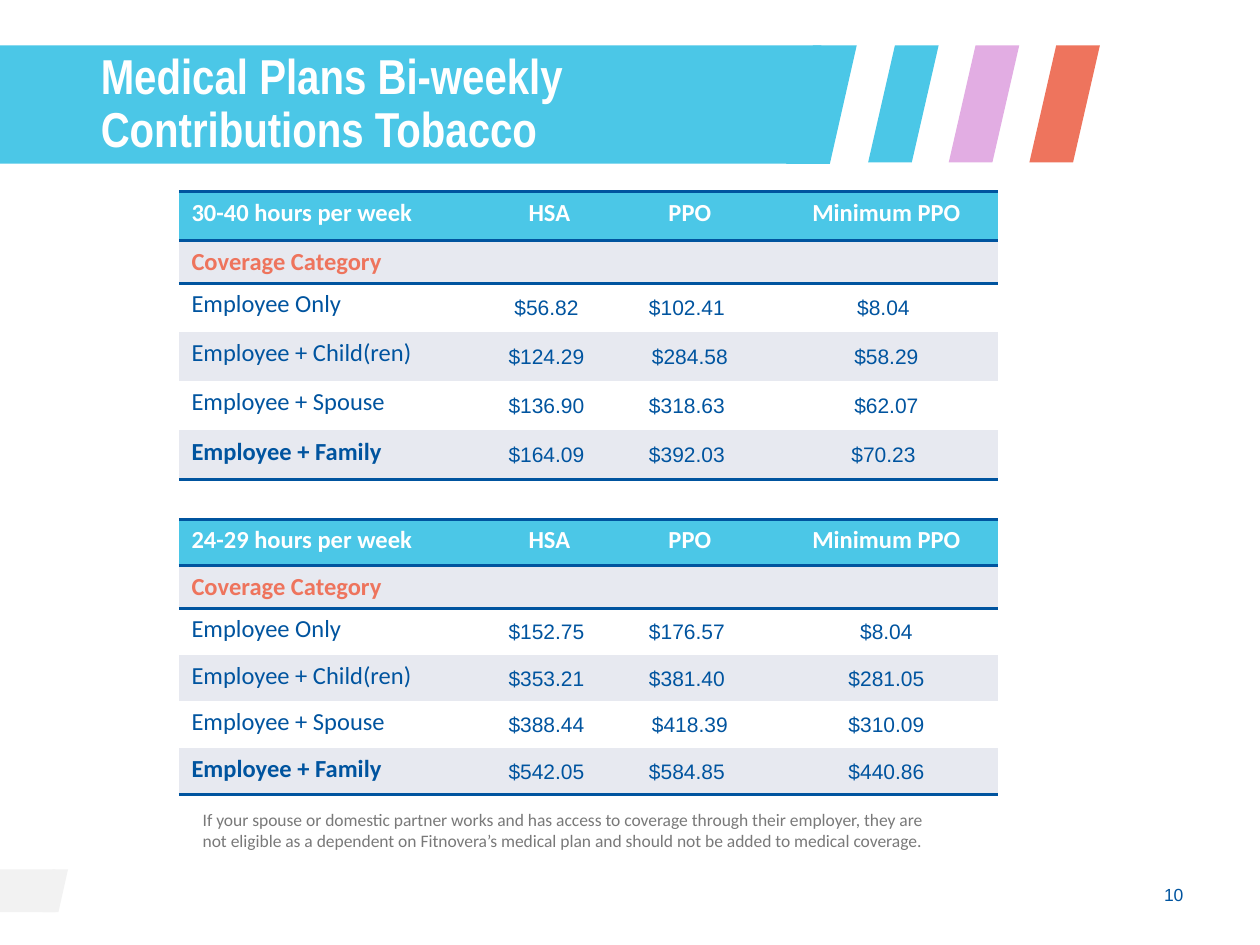
from lxml import etree
from pptx import Presentation
from pptx.dml.color import RGBColor
from pptx.enum.shapes import MSO_SHAPE
from pptx.enum.text import MSO_ANCHOR, MSO_AUTO_SIZE, PP_ALIGN
from pptx.oxml.ns import qn
from pptx.util import Inches, Pt

RECTANGLE, SLANT = MSO_SHAPE.RECTANGLE, MSO_SHAPE.PARALLELOGRAM
LEFT, CENTER, RIGHT = PP_ALIGN.LEFT, PP_ALIGN.CENTER, PP_ALIGN.RIGHT
TOP, MIDDLE = MSO_ANCHOR.TOP, MSO_ANCHOR.MIDDLE
NO_FIT = MSO_AUTO_SIZE.NONE
TITLE_ONLY = 5
PLAIN_TABLE = "{2D5ABB26-0587-4C30-8999-92F81FD0307C}"

COLORS = {
    "sky": "4BC7E7", "orchid": "E2ADE3", "coral": "EE745D", "navy": "00549F",
    "band": "E7E9F0", "white": "FFFFFF", "corner": "F2F2F2", "gray": "797979",
}

# Text formats
TITLE = {"name": "Arial Narrow", "size": Pt(28), "bold": True, "color": "white"}
HEADER = {"name": "Calibri", "size": Pt(14), "bold": True, "color": "white"}
CATEGORY = {**HEADER, "color": "coral"}
LABEL = {**HEADER, "bold": False, "color": "navy"}
TOTAL_LABEL = {**LABEL, "bold": True}
AMOUNT = {"name": "Arial", "size": Pt(12), "bold": False, "color": "navy"}
NOTE = {"name": "Calibri", "size": Pt(10), "bold": False, "color": "gray"}
NUMBER = {"name": "Arial", "size": Pt(10), "bold": False, "color": "navy"}

# Table content
COLUMN_WIDTHS = [2.5, 0.88, 1.35, 1.77]
PLANS = ["HSA", "PPO", "Minimum PPO"]
COVERAGE = ["Employee Only", "Employee + Child(ren)", "Employee + Spouse", "Employee + Family"]
FULL_TIME = [
    ["$56.82 ", "$102.41 ", "$8.04 "],
    ["$124.29 ", "$284.58", "$58.29"],
    ["$136.90 ", "$318.63 ", "$62.07"],
    ["$164.09 ", "$392.03 ", "$70.23 "],
]
PART_TIME = [
    ["$152.75 ", "$176.57 ", "$8.04"],
    ["$353.21 ", "$381.40 ", "$281.05"],
    ["$388.44 ", "$418.39", "$310.09"],
    ["$542.05 ", "$584.85 ", "$440.86"],
]
NOTE_LINES = [
    "If your spouse or domestic partner works and has access to coverage through their employer, they are",
    "not eligible as a dependent on Fitnovera’s medical plan and should not be added to medical coverage.",
]


def rgb(name):
    return RGBColor.from_string(COLORS[name])


def write(frame, lines, style, align=LEFT, spacing=None):
    for index, line in enumerate(lines):
        para = frame.paragraphs[0] if index == 0 else frame.add_paragraph()
        para.alignment = align
        para.line_spacing = spacing
        span = para.add_run()
        span.text = line
        for key, value in style.items():
            if key == "color":
                span.font.color.rgb = rgb(value)
            else:
                setattr(span.font, key, value)


def add_block(page, kind, left, top, width, height, color):
    block = page.shapes.add_shape(kind, Inches(left), Inches(top), Inches(width), Inches(height))
    block.shadow.inherit = False
    block.fill.solid()
    block.fill.fore_color.rgb = rgb(color)
    block.line.fill.background()
    if kind == SLANT:
        block.adjustments[0] = 0.381


def add_text(page, left, top, width, height, lines, style, align=LEFT, anchor=TOP):
    box = page.shapes.add_textbox(Inches(left), Inches(top), Inches(width), Inches(height))
    box.text_frame.word_wrap = True
    box.text_frame.vertical_anchor = anchor
    write(box.text_frame, lines, style, align)


def add_title(page, text):
    title = page.shapes.title
    title.left, title.top = Inches(0.7), Inches(0.61)
    title.width, title.height = Inches(5.83), Inches(0.45)
    frame = title.text_frame
    frame.word_wrap, frame.auto_size, frame.vertical_anchor = True, NO_FIT, MIDDLE
    write(frame, [text], TITLE, spacing=0.9)


def add_rules(cell, edges):
    """Draw navy rules on the given cell edges, which come before the cell fill."""
    properties = cell._tc.get_or_add_tcPr()
    for position, edge in enumerate(edges):
        rule = etree.Element(qn("a:" + edge), w=str(Pt(2)))
        fill = etree.SubElement(rule, qn("a:solidFill"))
        etree.SubElement(fill, qn("a:srgbClr"), val=COLORS["navy"])
        properties.insert(position, rule)


def fill_cell(cell, text, style, color, align=LEFT, edges=()):
    cell.fill.solid()
    cell.fill.fore_color.rgb = rgb(color)
    add_rules(cell, edges)
    if style is AMOUNT:
        cell.vertical_anchor = MIDDLE
        cell.margin_left = cell.margin_top = cell.margin_right = Inches(0.01)
        cell.margin_bottom = 0
    if text:
        write(cell.text_frame, [text], style, align)


def add_rates(page, top, row_height, category_height, hours, amounts):
    heights = [row_height, category_height] + [row_height] * len(amounts)
    holder = page.shapes.add_table(
        len(heights), len(COLUMN_WIDTHS), Inches(1.42), Inches(top),
        Inches(sum(COLUMN_WIDTHS)), Inches(sum(heights)))
    table = holder.table
    table._tbl.tblPr.find(qn("a:tableStyleId")).text = PLAIN_TABLE
    table.horz_banding = False
    for column, width in zip(table.columns, COLUMN_WIDTHS):
        column.width = Inches(width)
    for row, height in zip(table.rows, heights):
        row.height = Inches(height)

    # Header and category rows
    for index, text in enumerate([hours] + PLANS):
        align = CENTER if index else LEFT
        fill_cell(table.cell(0, index), text, HEADER, "sky", align, ["lnT", "lnB"])
        fill_cell(table.cell(1, index), "" if index else "Coverage Category",
                  CATEGORY, "band", edges=["lnT"])
    table.cell(1, 0).merge(table.cell(1, len(PLANS)))

    # Contribution rows
    last = len(amounts) - 1
    for index, (label, values) in enumerate(zip(COVERAGE, amounts)):
        color = "band" if index % 2 else "white"
        edges = ["lnB"] if index == last else []
        label_style = TOTAL_LABEL if index == last else LABEL
        fill_cell(table.cell(index + 2, 0), label, label_style, color, edges=edges)
        for column, value in enumerate(values, start=1):
            fill_cell(table.cell(index + 2, column), value, AMOUNT, color, CENTER, edges)


def main():
    deck = Presentation()
    deck.slide_width, deck.slide_height = Inches(10), Inches(7.5)
    page = deck.slides.add_slide(deck.slide_layouts[TITLE_ONLY])

    # Corner tab and title banner
    add_block(page, SLANT, 0.34, 6.9, 0.2, 0.34, "corner")
    add_block(page, RECTANGLE, 0, 6.9, 0.44, 0.34, "corner")
    add_block(page, RECTANGLE, 0, 0.36, 6.52, 0.94, "sky")
    add_block(page, SLANT, 6.24, 0.36, 0.56, 0.94, "sky")
    for index, color in enumerate(["sky", "orchid", "coral"]):
        add_block(page, SLANT, 6.89 + 0.64 * index, 0.36, 0.56, 0.93, color)
    # Bring the title in front of the banner
    page.shapes._spTree.append(page.shapes.title.element)
    add_title(page, "Medical Plans Bi-weekly Contributions Tobacco")

    # Contribution tables
    add_rates(page, 1.52, 0.39, 0.33, "30-40 hours per week", FULL_TIME)
    add_rates(page, 4.12, 0.37, 0.3, "24-29 hours per week", PART_TIME)

    # Note and page number
    add_text(page, 1.51, 6.37, 6.41, 0.44, NOTE_LINES, NOTE)
    add_text(page, 7.24, 6.9, 2.25, 0.4, ["10"], NUMBER, RIGHT, MIDDLE)
    deck.save("out.pptx")


if __name__ == "__main__":
    main()
